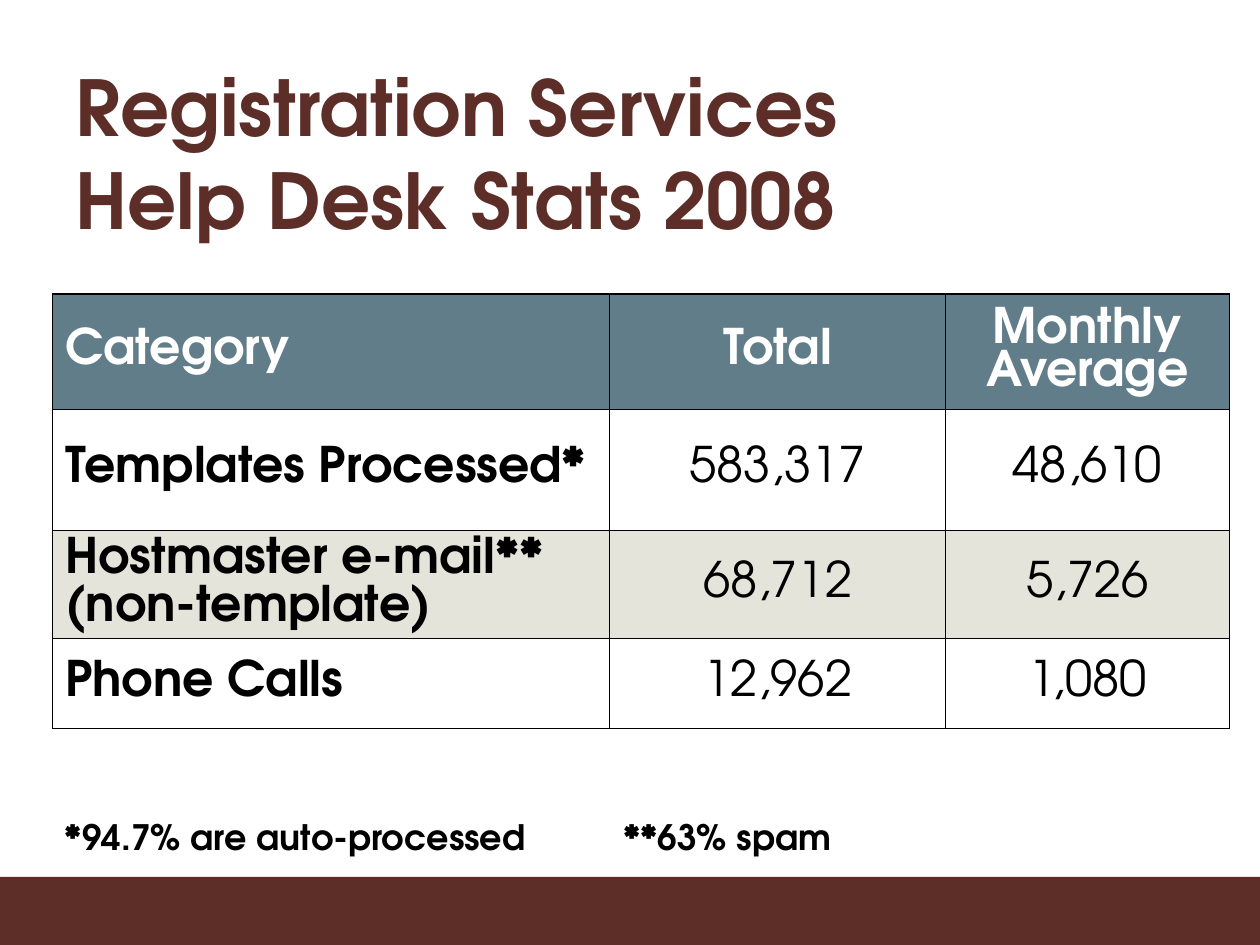
import pptx
import pptx.dml.color
import pptx.enum.shapes
import pptx.enum.text
import pptx.oxml.ns
import pptx.util
from lxml import etree

Cm, Pt = pptx.util.Cm, pptx.util.Pt
RGBColor = pptx.dml.color.RGBColor
ALIGN = pptx.enum.text.PP_ALIGN
ANCHOR = pptx.enum.text.MSO_ANCHOR
qn = pptx.oxml.ns.qn

BROWN = RGBColor(0x5D, 0x2D, 0x27)
SLATE = RGBColor(0x61, 0x7D, 0x89)
SAND = RGBColor(0xE5, 0xE4, 0xDA)
WHITE = RGBColor(0xFF, 0xFF, 0xFF)
BLACK = RGBColor(0x00, 0x00, 0x00)

COLUMN_WIDTHS = [11.23, 6.77, 5.72]
ROW_HEIGHTS = [2.32, 2.44, 2.18, 1.82]
ROW_FILLS = [SLATE, WHITE, SAND, WHITE]
STATS = [
    ["Category", "Total", "Monthly Average"],
    ["Templates Processed*", "583,317", "48,610"],
    ["Hostmaster e-mail**\n(non-template)", "68,712", "5,726"],
    ["Phone Calls", "12,962", "1,080"],
]


class SlideBuilder:
    font_name = "TeX Gyre Adventor"

    def __init__(self, slide):
        self.slide = slide

    def set_format(self, target, values):
        for name, value in values.items():
            setattr(target, name, value)

    def fill_text(self, text_frame, text, size, color, bold=True, **paragraph_format):
        """Each line feed starts a paragraph, each vertical tab a line."""
        text_frame.text = text
        for paragraph in text_frame.paragraphs:
            self.set_format(paragraph, paragraph_format)
            for run in paragraph.runs:
                self.set_format(run.font, {"name": self.font_name,
                                           "size": Pt(size), "bold": bold})
                run.font.color.rgb = color

    def bar(self, left, top, width, height, color):
        shape = self.slide.shapes.add_shape(
            pptx.enum.shapes.MSO_SHAPE.RECTANGLE,
            Cm(left), Cm(top), Cm(width), Cm(height))
        shape.shadow.inherit = False
        shape.fill.solid()
        shape.fill.fore_color.rgb = color
        shape.line.fill.background()

    def text(self, left, top, width, height, text, size, color,
             anchor=ANCHOR.TOP, tab=None):
        shape = self.slide.shapes.add_textbox(
            Cm(left), Cm(top), Cm(width), Cm(height))
        self.set_format(shape.text_frame,
                        {"word_wrap": True, "vertical_anchor": anchor})
        self.fill_text(shape.text_frame, text, size, color)
        if tab is not None:
            properties = shape.text_frame.paragraphs[0]._p.get_or_add_pPr()
            tab_list = etree.SubElement(properties, qn("a:tabLst"))
            etree.SubElement(tab_list, qn("a:tab"), pos=str(Cm(tab)), algn="l")

    def borders(self, cell, widths):
        properties = cell._tc.get_or_add_tcPr()
        for index, (side, width) in enumerate(widths.items()):
            line = etree.Element(qn(f"a:ln{side}"), w=str(Pt(width)))
            fill = etree.SubElement(line, qn("a:solidFill"))
            etree.SubElement(fill, qn("a:srgbClr"), val=str(BLACK))
            properties.insert(index, line)

    def table(self, left, top, rows, widths, heights, fills):
        frame = self.slide.shapes.add_table(
            len(rows), len(widths), Cm(left), Cm(top),
            Cm(sum(widths)), Cm(sum(heights)))
        table = frame.table
        for column, width in zip(table.columns, widths):
            column.width = Cm(width)
        last_row, last_column = len(rows) - 1, len(widths) - 1
        for row_index, texts in enumerate(rows):
            table.rows[row_index].height = Cm(heights[row_index])
            for column_index, text in enumerate(texts):
                cell = table.cell(row_index, column_index)
                cell.vertical_anchor = ANCHOR.MIDDLE
                cell.fill.solid()
                cell.fill.fore_color.rgb = fills[row_index]
                is_header, is_label = row_index == 0, column_index == 0
                self.fill_text(cell.text_frame, text, 28,
                               WHITE if is_header else BLACK,
                               bold=is_header or is_label,
                               alignment=ALIGN.LEFT if is_label else ALIGN.CENTER,
                               line_spacing=0.95, space_after=Pt(2.8))
                # Outer edges are thinner, except along the top
                self.borders(cell, {
                    "L": 0.5 if is_label else 1,
                    "R": 0.5 if column_index == last_column else 1,
                    "T": 1,
                    "B": 0.5 if row_index == last_row else 1,
                })


def main():
    presentation = pptx.Presentation()
    presentation.slide_width, presentation.slide_height = Cm(25.4), Cm(19.05)
    slide = presentation.slides.add_slide(presentation.slide_layouts[6])
    builder = SlideBuilder(slide)

    # Footer band
    builder.bar(0, 17.68, 25.4, 1.37, BROWN)

    # Help desk figures
    builder.table(1.06, 5.93, STATS, COLUMN_WIDTHS, ROW_HEIGHTS, ROW_FILLS)

    # Footnotes
    builder.text(1.06, 16.31, 21.59, 1.11,
                 "*94.7% are auto-processed\t**63% spam", 20, BLACK, tab=11.25)

    # Title
    builder.text(1.27, 1.48, 22.86, 3.18,
                 "Registration Services\vHelp Desk Stats 2008", 44, BROWN,
                 anchor=ANCHOR.MIDDLE)

    presentation.save("out.pptx")


if __name__ == "__main__":
    main()
